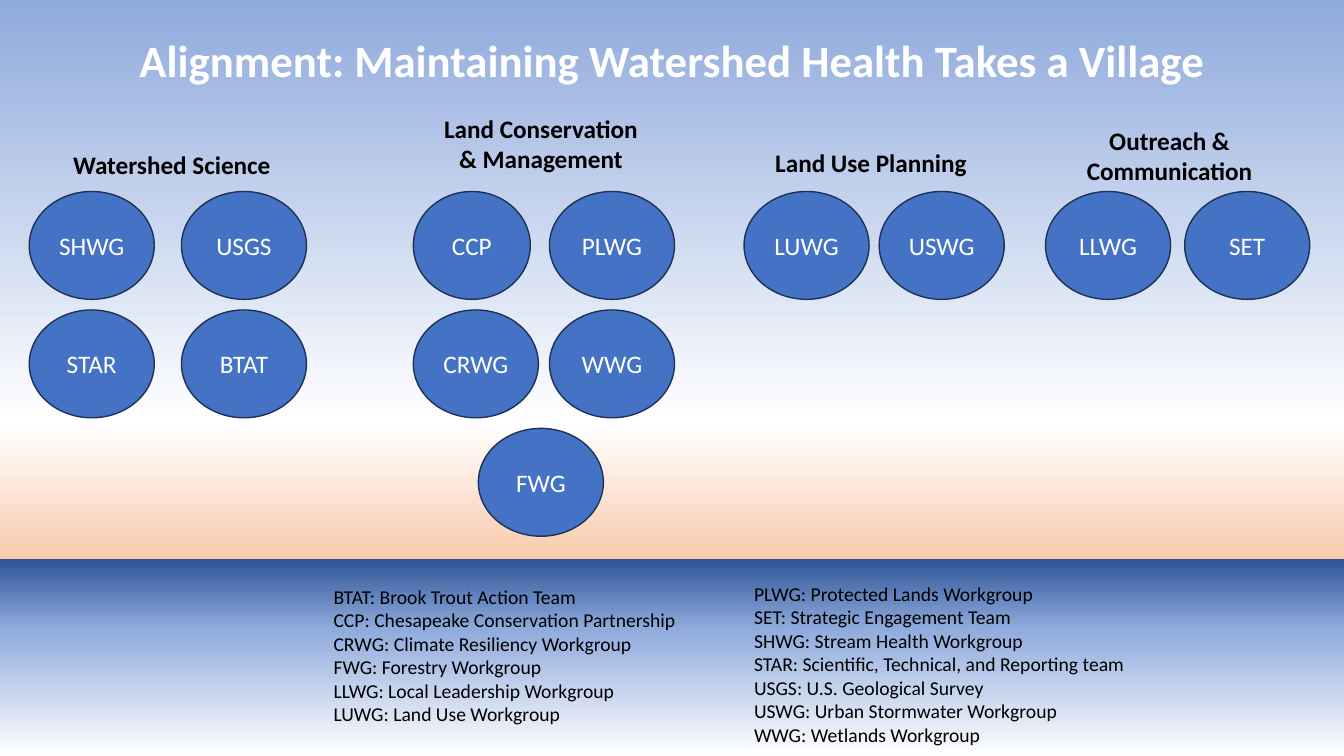
from copy import deepcopy

from pptx import Presentation
from pptx.dml.color import RGBColor
from pptx.enum.shapes import MSO_SHAPE
from pptx.enum.text import MSO_ANCHOR, MSO_AUTO_SIZE, PP_ALIGN
from pptx.oxml.ns import qn
from pptx.util import Inches, Pt

WHITE = RGBColor(0xFF, 0xFF, 0xFF)
BLACK = RGBColor(0x00, 0x00, 0x00)
BLUE = RGBColor(0x44, 0x72, 0xC4)
OUTLINE = RGBColor(0x1E, 0x32, 0x56)
SKY = RGBColor(0x8F, 0xAA, 0xDC)
DEEP_BLUE = RGBColor(0x2F, 0x55, 0x97)
ORANGE = RGBColor(0xED, 0x7D, 0x31)

FONT = "Calibri"
SLIDE_W, SLIDE_H = 13.33, 7.5

BACKGROUND = [(0, SKY), (0.56, WHITE), (1, ORANGE)]
BAND = [(0, DEEP_BLUE), (0.35, SKY), (1, WHITE)]
BAND_TOP = 5.55

TITLE = "Alignment: Maintaining Watershed Health Takes a Village"
TITLE_BOX = (1.24, 0.28, 10.86, 0.64)

# heading lines, heading box, heading alignment, first column, column step, rows of teams
GROUPS = [
    (["Watershed Science"], (0.52, 1.43, 2.37, 0.4), PP_ALIGN.CENTER,
     0.29, 1.51, [["SHWG", "USGS"], ["STAR", "BTAT"]]),
    (["Land Conservation", "& Management"], (4.24, 1.07, 2.25, 0.71), PP_ALIGN.CENTER,
     4.1, 1.35, [["CCP", "PLWG"], ["CRWG", "WWG"], ["FWG"]]),
    (["Land Use Planning"], (7.59, 1.41, 2.25, 0.4), PP_ALIGN.LEFT,
     7.38, 1.34, [["LUWG", "USWG"]]),
    (["Outreach & Communication"], (10.66, 1.19, 1.88, 0.71), PP_ALIGN.CENTER,
     10.37, 1.38, [["LLWG", "SET"]]),
]
TEAM_W, TEAM_H = 1.24, 1.07
NARROW_TEAMS = {"CCP": 1.16}
FIRST_ROW, ROW_STEP = 1.9, 1.175

LEGENDS = [
    ((3.21, 5.75, 3.63, 1.99), [
        "BTAT: Brook Trout Action Team",
        "CCP: Chesapeake Conservation Partnership",
        "CRWG: Climate Resiliency Workgroup",
        "FWG: Forestry Workgroup",
        "LLWG: Local Leadership Workgroup",
        "LUWG: Land Use Workgroup",
    ]),
    ((7.38, 5.72, 3.91, 1.99), [
        "PLWG: Protected Lands Workgroup",
        "SET: Strategic Engagement Team",
        "SHWG: Stream Health Workgroup",
        "STAR: Scientific, Technical, and Reporting team",
        "USGS: U.S. Geological Survey",
        "USWG: Urban Stormwater Workgroup",
        "WWG: Wetlands Workgroup",
    ]),
]


def fill_downward(fill, owner, stops):
    """Give the fill of owner a top-to-bottom gradient of (position, colour) stops."""
    fill.gradient()
    fill.gradient_angle = 270
    stop_list = owner.element.find(".//" + qn("a:gsLst"))
    while len(stop_list) < len(stops):
        stop_list.append(deepcopy(stop_list[-1]))
    for stop, (position, colour) in zip(fill.gradient_stops, stops):
        stop.position = position
        stop.color.rgb = colour


def write(frame, lines, size, colour, align, bold=False):
    for number, line in enumerate(lines):
        paragraph = frame.add_paragraph() if number else frame.paragraphs[0]
        paragraph.alignment = align
        run = paragraph.add_run()
        run.text = line
        run.font.name = FONT
        run.font.size = Pt(size)
        run.font.bold = bold
        run.font.color.rgb = colour


def add_text(slide, box, lines, size, colour, align=PP_ALIGN.LEFT, bold=False, wrap=False):
    frame = slide.shapes.add_textbox(*map(Inches, box)).text_frame
    frame.word_wrap = wrap
    frame.auto_size = MSO_AUTO_SIZE.SHAPE_TO_FIT_TEXT
    write(frame, lines, size, colour, align, bold)


def add_team(slide, team, left, top):
    width = NARROW_TEAMS.get(team, TEAM_W)
    circle = slide.shapes.add_shape(
        MSO_SHAPE.OVAL, *map(Inches, (left, top, width, TEAM_H)))
    circle.shadow.inherit = False
    circle.fill.solid()
    circle.fill.fore_color.rgb = BLUE
    circle.line.color.rgb = OUTLINE
    circle.line.width = Pt(1)
    circle.text_frame.word_wrap = True
    circle.text_frame.vertical_anchor = MSO_ANCHOR.MIDDLE
    write(circle.text_frame, [team], 18, WHITE, PP_ALIGN.CENTER)


def add_group(slide, heading, box, align, first_column, column_step, rows):
    """Add a heading and its teams; a team alone in its row is centred on the heading."""
    add_text(slide, box, heading, 18, BLACK, align, bold=True, wrap=True)
    heading_centre = box[0] + box[2] / 2
    for row, teams in enumerate(rows):
        left = first_column if len(teams) > 1 else heading_centre - TEAM_W / 2
        for column, team in enumerate(teams):
            add_team(slide, team, left + column * column_step, FIRST_ROW + row * ROW_STEP)


def main():
    deck = Presentation()
    deck.slide_width, deck.slide_height = Inches(SLIDE_W), Inches(SLIDE_H)
    slide = deck.slides.add_slide(deck.slide_layouts[6])
    fill_downward(slide.background.fill, slide, BACKGROUND)

    band = slide.shapes.add_shape(
        MSO_SHAPE.RECTANGLE, 0, Inches(BAND_TOP), deck.slide_width, Inches(SLIDE_H - BAND_TOP))
    band.shadow.inherit = False
    band.line.fill.background()
    fill_downward(band.fill, band, BAND)

    add_text(slide, TITLE_BOX, [TITLE], 32, WHITE, PP_ALIGN.CENTER, bold=True)
    for group in GROUPS:
        add_group(slide, *group)
    for box, entries in LEGENDS:
        add_text(slide, box, entries, 14, BLACK)

    deck.save("out.pptx")


if __name__ == "__main__":
    main()
